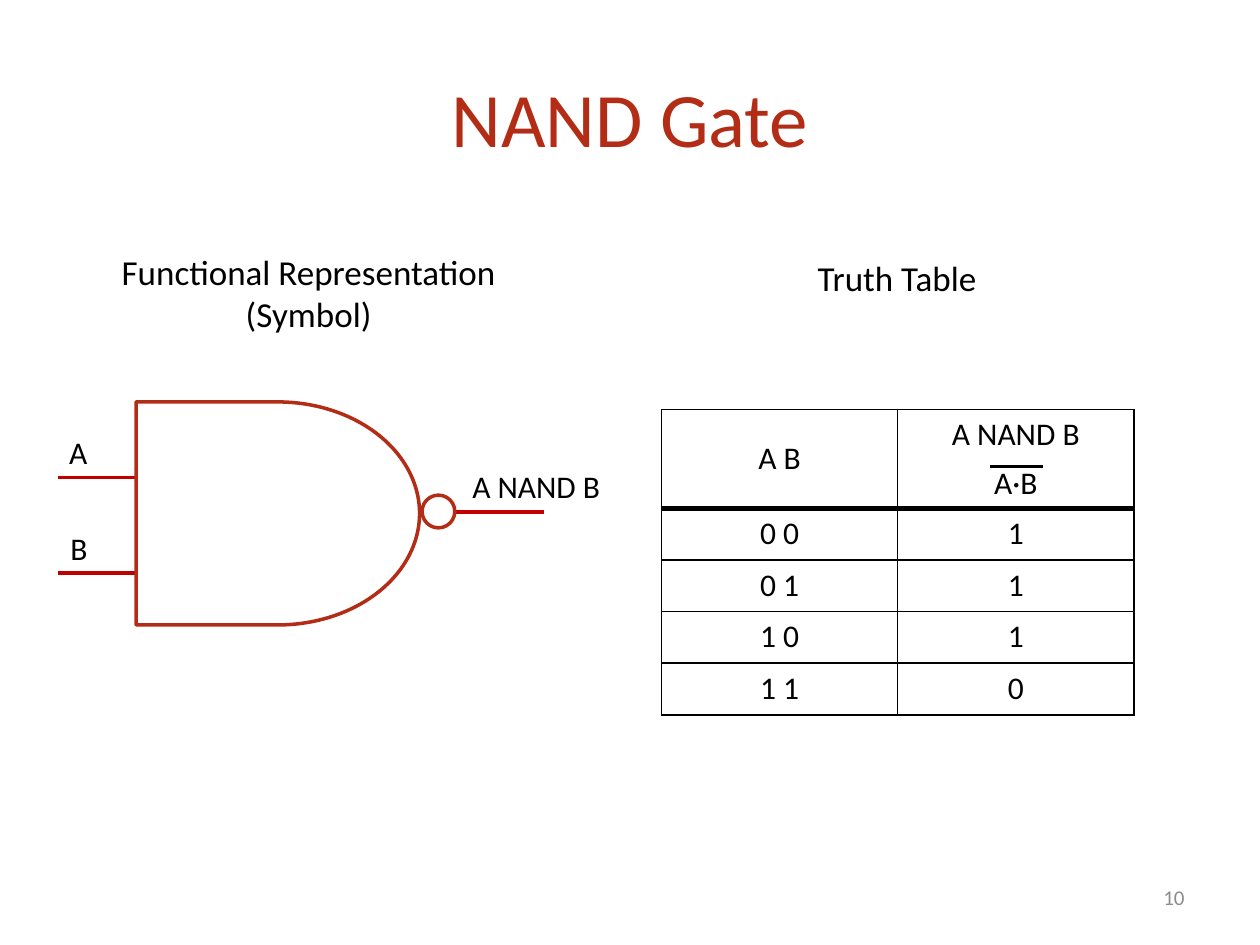
from lxml.etree import SubElement
from pptx import Presentation
from pptx.dml.color import RGBColor
from pptx.enum.shapes import MSO_CONNECTOR, MSO_SHAPE
from pptx.enum.text import MSO_ANCHOR, PP_ALIGN
from pptx.oxml.ns import qn
from pptx.util import Inches, Pt

COLUMNS, ROWS = 40, 30
BLACK, RED, WIRE, GRAY, WHITE = "000000", "B32C16", "C00000", "8C8C8C", "FFFFFF"


def color(value):
    return RGBColor.from_string(value)


class GateSlide:
    font = "Calibri"

    def __init__(self, deck):
        self.slide = deck.slides.add_slide(deck.slide_layouts[5])
        self.shapes = self.slide.shapes
        self.column = deck.slide_width / COLUMNS
        self.row = deck.slide_height / ROWS

    def place(self, *lengths):
        units = (self.column, self.row) * 2
        return [round(length * unit) for length, unit in zip(lengths, units)]

    def fill_text(self, frame, lines, size, ink=BLACK, align=PP_ALIGN.LEFT, after=0):
        frame.text = "\n".join(lines)
        for paragraph in frame.paragraphs:
            paragraph.alignment = align
            paragraph.space_after = Pt(after)
            for run in paragraph.runs:
                look = {"name": self.font, "size": Pt(size)}
                for key, value in look.items():
                    setattr(run.font, key, value)
                run.font.color.rgb = color(ink)

    def title(self, text, box):
        title = self.shapes.title
        for key, value in zip(("left", "top", "width", "height"), self.place(*box)):
            setattr(title, key, value)
        title.text_frame.vertical_anchor = MSO_ANCHOR.MIDDLE
        self.fill_text(title.text_frame, [text], 44, RED, PP_ALIGN.CENTER)

    def text(self, lines, box, size, ink=BLACK, align=PP_ALIGN.LEFT, anchor=MSO_ANCHOR.TOP):
        frame = self.shapes.add_textbox(*self.place(*box)).text_frame
        frame.word_wrap = True
        frame.vertical_anchor = anchor
        self.fill_text(frame, lines, size, ink, align)

    def line(self, start, end, y, ink, width):
        line = self.shapes.add_connector(
            MSO_CONNECTOR.STRAIGHT, *self.place(start, y, end, y))
        line.line.color.rgb = color(ink)
        line.line.width = Pt(width)
        SubElement(line._element.spPr, qn("a:effectLst"))

    def outline(self, kind, box):
        shape = self.shapes.add_shape(kind, *self.place(*box))
        shape.shadow.inherit = False
        shape.fill.solid()
        shape.fill.fore_color.rgb = color(WHITE)
        shape.line.color.rgb = color(RED)
        shape.line.width = Pt(2)

    def borders(self, cell, widths):
        properties = cell._tc.get_or_add_tcPr()
        for side, width in widths.items():
            edge = SubElement(properties, qn(f"a:ln{side}"), w=str(Pt(width)))
            fill = SubElement(edge, qn("a:solidFill"))
            SubElement(fill, qn("a:srgbClr"), val=BLACK)

    def table(self, rows, box, heights):
        table = self.shapes.add_table(
            len(rows), len(rows[0]), *self.place(*box)).table
        table.first_row = table.horz_banding = False
        for r, (values, height) in enumerate(zip(rows, heights)):
            table.rows[r].height = round(height * self.row)
            for c, lines in enumerate(values):
                cell = table.cell(r, c)
                self.fill_text(cell.text_frame, lines, 18, align=PP_ALIGN.CENTER,
                               after=6 if r == 0 else 0)
                self.borders(cell, {"L": 1, "R": 1, "T": 3 if r == 1 else 1,
                                    "B": 3 if r == 0 else 1})
                cell.fill.background()
        table.cell(0, 0).vertical_anchor = MSO_ANCHOR.MIDDLE


def main():
    deck = Presentation()
    deck.slide_width, deck.slide_height = Inches(10), Inches(7.5)
    page = GateSlide(deck)

    page.title("NAND Gate", (2, 1.2, 36, 5))
    page.text(["10"], (28.68, 27.68, 9.32, 1.6), 12, GRAY,
              PP_ALIGN.RIGHT, MSO_ANCHOR.MIDDLE)
    page.text(["Functional Representation", "(Symbol)"],
              (2.32, 7.76, 14.96, 3.08), 20, align=PP_ALIGN.CENTER)
    page.text(["Truth Table"], (21, 7.96, 14.96, 1.76), 20, align=PP_ALIGN.CENTER)

    for start, end, y in ((1.84, 5.08, 15.16), (1.84, 5.08, 18.2), (14.08, 17.28, 16.24)):
        page.line(start, end, y, WIRE, 2.25)
    page.outline(MSO_SHAPE.FLOWCHART_DELAY, (4.32, 12.76, 9, 7.08))
    page.outline(MSO_SHAPE.OVAL, (13.4, 15.72, 1.04, 1.04))
    for label, x, y, width in (("A", 1.8, 13.56, 2.76), ("B", 1.84, 16.6, 2.76),
                               ("A NAND B", 14.6, 14.64, 5.76)):
        page.text([label], (x, y, width, 1.6), 18)

    truth = [([f"{a} {b}"], [str(1 - a * b)]) for a in (0, 1) for b in (0, 1)]
    header = (["A B"], ["A NAND B", "A·B"])
    page.table([header, *truth], (21, 13, 15, 9.64), [3.08] + [1.64] * len(truth))
    page.line(31.44, 33.12, 14.8, BLACK, 1.5)

    deck.save("out.pptx")


if __name__ == "__main__":
    main()
